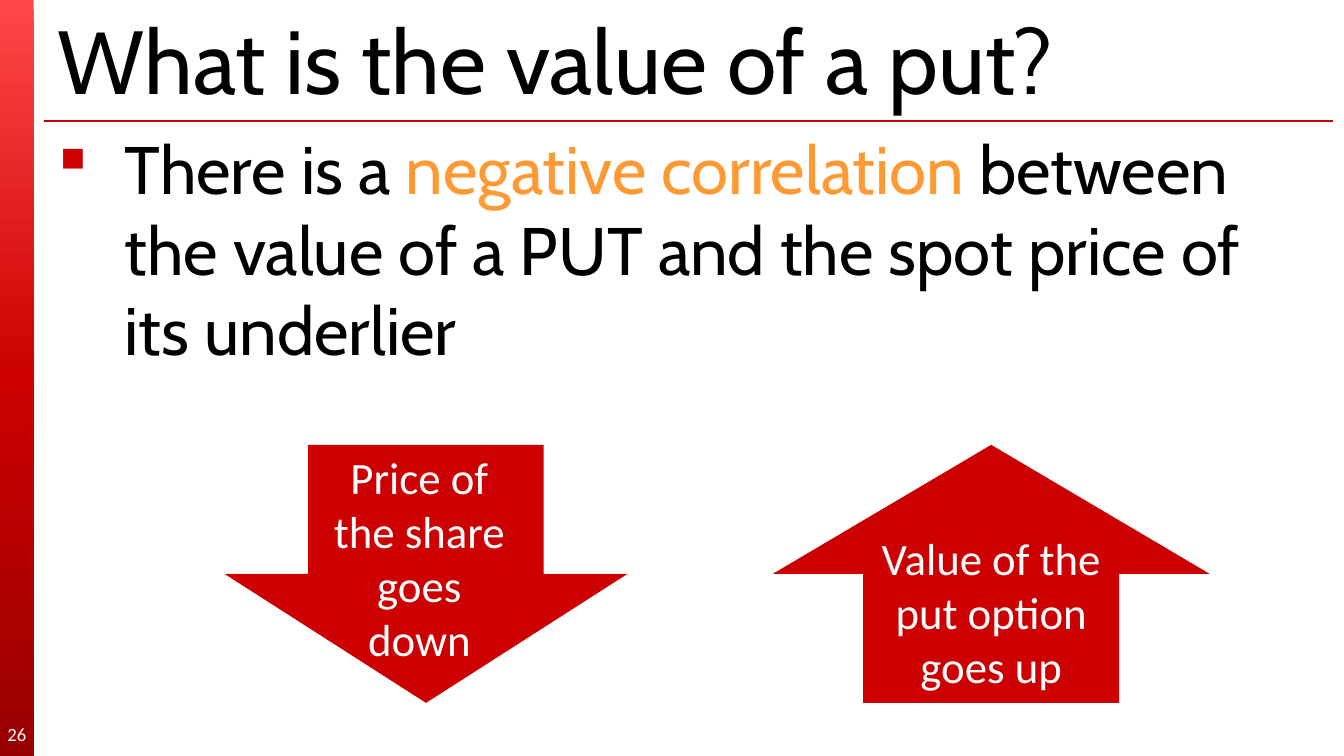
from copy import deepcopy
from dataclasses import dataclass

from pptx import Presentation
from pptx.dml.color import RGBColor as RGB
from pptx.enum.shapes import MSO_CONNECTOR as LINE, MSO_SHAPE as SHAPE
from pptx.enum.text import MSO_ANCHOR as ANCHOR, PP_ALIGN as ALIGN
from pptx.oxml.ns import qn
from pptx.oxml.xmlchemy import OxmlElement as Element
from pptx.util import Inches, Pt


@dataclass(frozen=True)
class Theme:
    head: str = "Cabin"
    body: str = "Calibri"
    mark: str = "Wingdings"
    black: str = "000000"
    white: str = "FFFFFF"
    red: str = "CC0000"
    rule: str = "C80000"
    accent: str = "FF9933"
    fade: tuple = ((0, "FF4747"), (50, "CC0000"), (100, "990000"))
    title: int = 48
    point: int = 36
    label: int = 24
    page: int = 10


T = Theme()


def color(code):
    return RGB.from_string(code)


def add_run(para, text, size, font, code):
    run = para.add_run()
    run.text = text
    run.font.size = Pt(size)
    run.font.name = font
    run.font.color.rgb = color(code)


def add_box(slide, box, anchor=ANCHOR.TOP):
    frame = slide.shapes.add_textbox(*map(Inches, box)).text_frame
    frame.word_wrap = True
    frame.vertical_anchor = anchor
    return frame


def add_label(frame, text, size=T.label):
    para = frame.paragraphs[0]
    para.alignment = ALIGN.CENTER
    add_run(para, text, size, T.body, T.white)


def add_shape(slide, kind, box):
    shape = slide.shapes.add_shape(kind, *map(Inches, box))
    shape.shadow.inherit = False
    shape.line.fill.background()
    return shape


def add_arrow(slide, kind, box, shaft):
    arrow = add_shape(slide, kind, box)
    arrow.fill.solid()
    arrow.fill.fore_color.rgb = color(T.red)
    arrow.adjustments[0] = shaft
    arrow.adjustments[1] = 0.5
    return arrow


def add_band(slide, width, height):
    """Draw the side band, fading from top to bottom."""
    band = add_shape(slide, SHAPE.RECTANGLE, (0, 0, width, height))
    band.fill.gradient()
    band.fill.gradient_angle = 270
    stops = band._element.spPr.find(qn("a:gradFill")).find(qn("a:gsLst"))
    stops.append(deepcopy(stops[-1]))
    for stop, (place, code) in zip(band.fill.gradient_stops, T.fade):
        stop.position = place / 100
        stop.color.rgb = color(code)


def add_rule(slide, left, right, y):
    ends = map(Inches, (left, y, right, y))
    rule = slide.shapes.add_connector(LINE.STRAIGHT, *ends)
    rule.line.color.rgb = color(T.rule)
    rule.line.width = Pt(0.75)
    rule._element.spPr.append(Element("a:effectLst"))


def add_bullet(para, mark, code, indent):
    """Hang a bullet; in the Wingdings font § is a small square."""
    props = para._p.get_or_add_pPr()
    props.set("marL", str(Inches(indent)))
    props.set("indent", str(-Inches(indent)))
    tint = Element("a:buClr")
    rgb = Element("a:srgbClr")
    rgb.set("val", code)
    tint.append(rgb)
    font = Element("a:buFont")
    font.set("typeface", T.mark)
    font.set("charset", "2")
    char = Element("a:buChar")
    char.set("char", mark)
    props.extend((tint, font, char))


def add_point(slide, box, parts):
    para = add_box(slide, box).paragraphs[0]
    para.space_before = Pt(T.point * 0.2)
    add_bullet(para, "§", T.red, 0.5)
    for text, code in parts:
        add_run(para, text, T.point, T.head, code)


def add_page(slide, box, text):
    frame = add_box(slide, box, ANCHOR.MIDDLE)
    frame.margin_left = frame.margin_right = 0
    frame.margin_top = frame.margin_bottom = 0
    add_label(frame, text, T.page)


def main():
    deck = Presentation()
    deck.slide_width = Inches(10)
    deck.slide_height = deck.slide_width * 9 // 16
    slide = deck.slides.add_slide(deck.slide_layouts[6])

    add_band(slide, 0.25, deck.slide_height.inches
             if hasattr(deck.slide_height, "inches") else 10 * 9 / 16)
    add_rule(slide, 0.33, 9.92, 0.9)
    title = add_box(slide, (0.33, 0.06, 9.58, 0.75), ANCHOR.MIDDLE)
    add_run(title.paragraphs[0], "What is the value of a put?",
            T.title, T.head, T.black)
    add_point(slide, (0.33, 0.9, 9.33, 4.33), (
        ("There is a ", T.black),
        ("negative correlation ", T.accent),
        ("between the value of a PUT and the spot price of its underlier",
         T.black),
    ))
    add_page(slide, (0, 5.31, 0.25, 0.3), "26")

    add_arrow(slide, SHAPE.DOWN_ARROW, (1.67, 3.31, 3, 1.92), 0.584)
    rise = add_arrow(slide, SHAPE.UP_ARROW, (5.75, 3.31, 3.25, 1.92), 0.586)
    rise.text_frame.vertical_anchor = ANCHOR.BOTTOM
    rise.text_frame.margin_bottom = Inches(0.08)
    add_label(rise.text_frame, "Value of the put option goes up")
    share = add_box(slide, (2.33, 3.3, 1.58, 1.72))
    add_label(share, "Price of the share goes down")

    deck.save("out.pptx")


if __name__ == "__main__":
    main()
